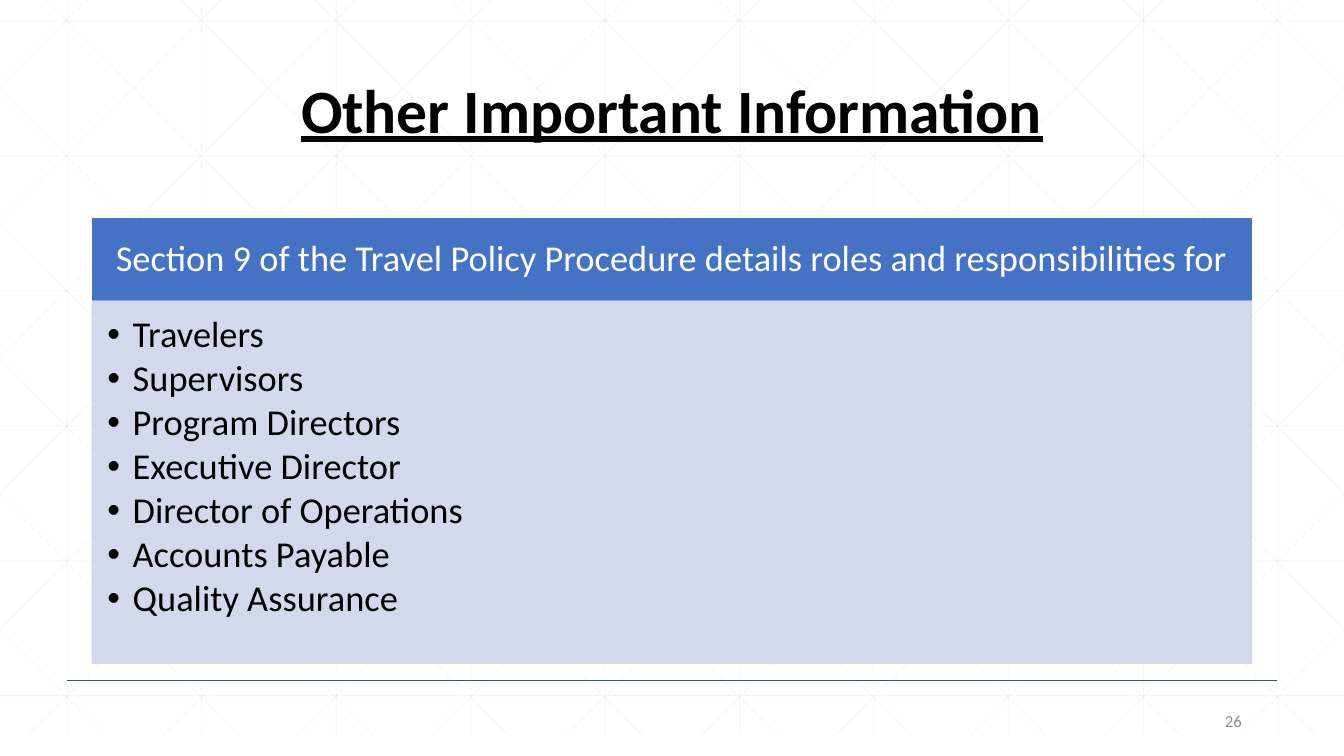
from dataclasses import dataclass
from typing import Iterator

from lxml import etree
from pptx import Presentation
from pptx import util as u
from pptx.dml.color import RGBColor
from pptx.enum import shapes, text
from pptx.oxml.ns import qn


@dataclass(frozen=True)
class Theme:
    font: str = "Calibri"
    ink: str = "000000"
    header: str = "4472C4"
    header_ink: str = "FFFFFF"
    panel: str = "CFD5EA"
    rule: str = "2F5597"
    grid: str = "D9D9D9"
    page_number: str = "8C8C8C"
    title_size: float = 44
    body_size: float = 26
    page_number_size: float = 12


@dataclass(frozen=True)
class Line:
    """A straight line, in centimetres."""
    x1: float
    y1: float
    x2: float
    y2: float


@dataclass(frozen=True)
class Block:
    """A text block, in centimetres; insets run left, top, right, bottom."""
    left: float
    top: float
    width: float
    height: float
    lines: tuple[str, ...]
    size: float
    ink: str
    align: text.PP_ALIGN
    anchor: text.MSO_ANCHOR = text.MSO_ANCHOR.MIDDLE
    insets: tuple[float, float, float, float] = (0.25, 0.13, 0.25, 0.13)
    fill: str | None = None
    opacity: int = 100
    line_spacing: float = 0.9
    space_after: float = 0
    heading: bool = False
    bulleted: bool = False


THEME = Theme()
WIDTH, HEIGHT = 33.87, 19.05
GRID_BOTTOM = 18.52
GRID_STEP = 3.39
MARGIN, CONTENT_WIDTH = 2.33, 29.21
ROLES = ("Travelers", "Supervisors", "Program Directors", "Executive Director",
         "Director of Operations", "Accounts Payable", "Quality Assurance")

BLOCKS = (
    Block(MARGIN, 1.01, CONTENT_WIDTH, 3.68, ("Other Important Information",),
          THEME.title_size, THEME.ink, text.PP_ALIGN.CENTER, heading=True),
    Block(MARGIN, 5.51, CONTENT_WIDTH, 2.08,
          ("Section 9 of the Travel Policy Procedure details roles and responsibilities for",),
          THEME.body_size, THEME.header_ink, text.PP_ALIGN.CENTER,
          insets=(0.5, 0.3, 0.5, 0.3), fill=THEME.header),
    Block(MARGIN, 7.59, CONTENT_WIDTH, 9.12, ROLES,
          THEME.body_size, THEME.ink, text.PP_ALIGN.LEFT, text.MSO_ANCHOR.TOP,
          insets=(0.38, 0.38, 0.5, 0.58), fill=THEME.panel, opacity=90,
          space_after=3.4, bulleted=True),
    Block(23.93, 17.65, 7.62, 1.02, ("26",), THEME.page_number_size,
          THEME.page_number, text.PP_ALIGN.RIGHT, line_spacing=1),
)


def grid_lines() -> Iterator[Line]:
    """Yield the upright, level and mirrored diagonal lines, cut at the slide edges."""
    for column in range(10):
        x = GRID_STEP * (column + 0.5)
        yield Line(x, 0, x, GRID_BOTTOM)
    for row in range(6):
        y = 0.53 + 3.4 * row
        yield Line(0, y, WIDTH, y)
    run = 0.994
    for diagonal in range(-5, 10):
        x = 1.17 + GRID_STEP * diagonal
        x1, y1 = max(x, 0), max(-x / run, 0)
        y2 = min(GRID_BOTTOM, (WIDTH - x) / run)
        x2 = x + y2 * run
        yield Line(x1, y1, x2, y2)
        yield Line(WIDTH - x1, y1, WIDTH - x2, y2)


def set_opacity(properties, percent: int) -> None:
    for color in properties.iter(qn("a:srgbClr")):
        etree.SubElement(color, qn("a:alpha"), val=str(percent * 1000))


def draw_line(slide, line: Line, color: str, weight: float, opacity: int = 100) -> None:
    connector = slide.shapes.add_connector(
        shapes.MSO_CONNECTOR.STRAIGHT,
        u.Cm(line.x1), u.Cm(line.y1), u.Cm(line.x2), u.Cm(line.y2))
    connector.line.color.rgb = RGBColor.from_string(color)
    connector.line.width = u.Pt(weight)
    properties = connector._element.spPr
    if opacity < 100:
        set_opacity(properties, opacity)
    etree.SubElement(properties, qn("a:effectLst"))


def add_bullet(paragraph) -> None:
    properties = paragraph._p.get_or_add_pPr()
    indent = u.Cm(0.635)
    properties.set("marL", str(indent))
    properties.set("indent", str(-indent))
    etree.SubElement(properties, qn("a:buFont"), typeface="Arial")
    etree.SubElement(properties, qn("a:buChar"), char="•")


def add_block_shape(slide, block: Block):
    place = [u.Cm(n) for n in (block.left, block.top, block.width, block.height)]
    if block.fill is None:
        return slide.shapes.add_textbox(*place)
    box = slide.shapes.add_shape(shapes.MSO_SHAPE.RECTANGLE, *place)
    box.shadow.inherit = False
    box.fill.solid()
    box.fill.fore_color.rgb = RGBColor.from_string(block.fill)
    box.line.color.rgb = RGBColor.from_string(block.fill)
    box.line.width = u.Pt(1)
    if block.opacity < 100:
        set_opacity(box._element.spPr, block.opacity)
    return box


def draw_block(slide, block: Block) -> None:
    frame = add_block_shape(slide, block).text_frame
    frame.word_wrap = True
    frame.vertical_anchor = block.anchor
    (frame.margin_left, frame.margin_top,
     frame.margin_right, frame.margin_bottom) = map(u.Cm, block.insets)
    frame.text = "\n".join(block.lines)
    for paragraph in frame.paragraphs:
        paragraph.alignment = block.align
        paragraph.line_spacing = block.line_spacing
        paragraph.space_after = u.Pt(block.space_after)
        font = paragraph.font
        font.name = THEME.font
        font.size = u.Pt(block.size)
        font.color.rgb = RGBColor.from_string(block.ink)
        font.bold = font.underline = block.heading
        if block.bulleted:
            add_bullet(paragraph)


def main() -> None:
    deck = Presentation()
    deck.slide_width, deck.slide_height = u.Cm(WIDTH), u.Cm(HEIGHT)
    slide = deck.slides.add_slide(deck.slide_layouts[6])
    for line in grid_lines():
        draw_line(slide, line, THEME.grid, 0.5, opacity=25)
    draw_line(slide, Line(1.69, 17.15, 32.17, 17.15), THEME.rule, 1)
    for block in BLOCKS:
        draw_block(slide, block)
    deck.save("out.pptx")


if __name__ == "__main__":
    main()
